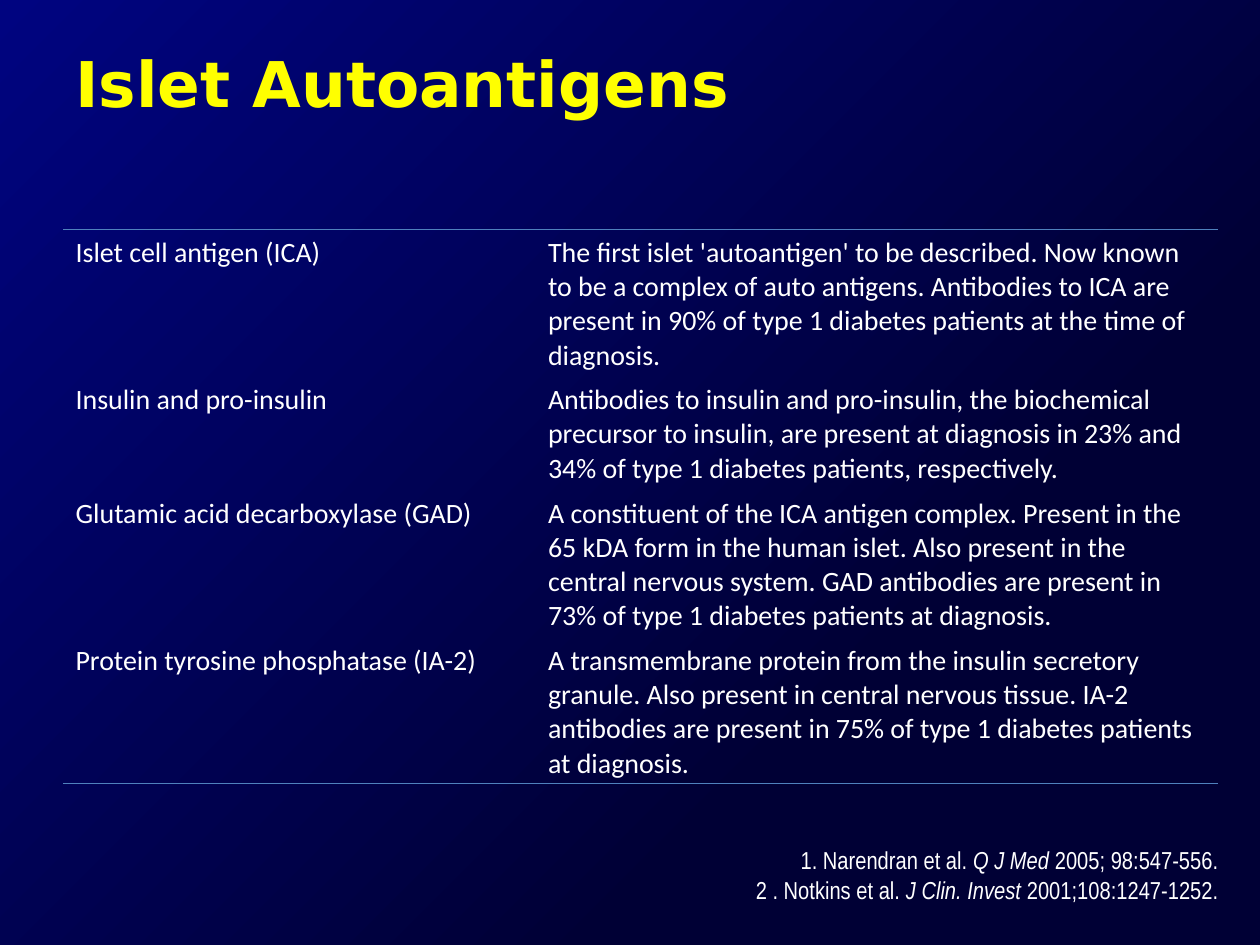
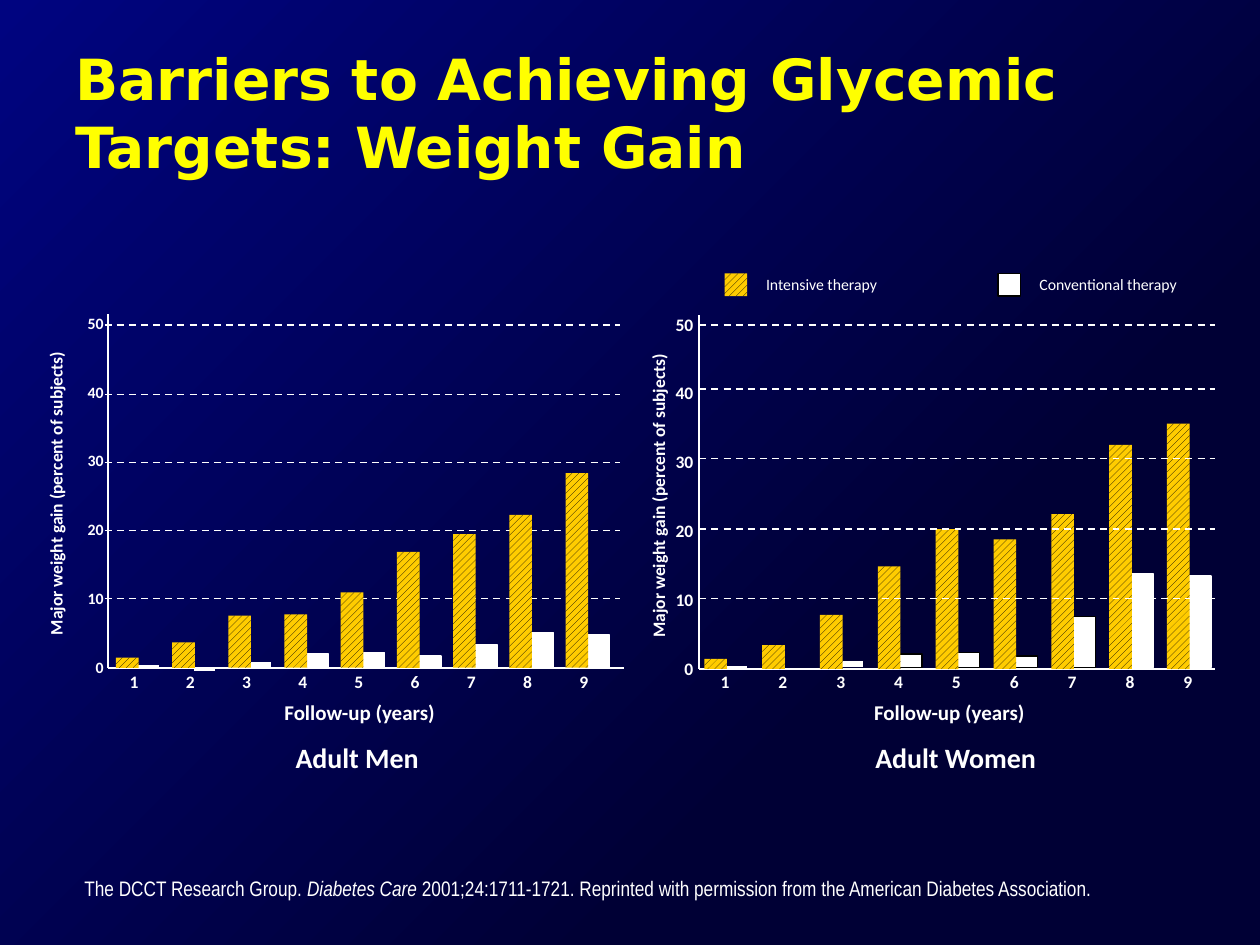
"""Build two diabetes slides: an autoantigen table and paired weight-gain bar charts."""
import pptx
import pptx.dml.color
import pptx.enum.dml
import pptx.enum.shapes
import pptx.enum.text
import pptx.oxml
import pptx.oxml.ns
import pptx.util

Inches = pptx.util.Inches
Pt = pptx.util.Pt
ALIGN = pptx.enum.text.PP_ALIGN

COLORS = {"title": "FFFF00", "text": "FFFFFF", "gold": "FFCC00", "black": "000000",
          "rule": "4F81BD", "night": "000035", "blue": "000480"}
TITLE = {"size": 36, "name": "DejaVu Sans", "bold": True, "color": "title"}
BODY = {"size": 16, "name": "Calibri", "color": "text"}
SOURCE = {"size": 14, "name": "Arial Narrow", "color": "text"}
LABEL = {"size": 10, "name": "Calibri", "bold": True, "color": "text"}
PADDING = (0.1, 0.05)

ANTIGENS = [
    ("Islet cell antigen (ICA)",
     "The first islet 'autoantigen' to be described. Now known to be a complex of auto antigens. "
     "Antibodies to ICA are present in 90% of type 1 diabetes patients at the time of diagnosis."),
    ("Insulin and pro-insulin",
     "Antibodies to insulin and pro-insulin, the biochemical precursor to insulin, are present at "
     "diagnosis in 23% and 34% of type 1 diabetes patients, respectively."),
    ("Glutamic acid decarboxylase (GAD)",
     "A constituent of the ICA antigen complex. Present in the 65 kDA form in the human islet. Also "
     "present in the central nervous system. GAD antibodies are present in 73% of type 1 diabetes "
     "patients at diagnosis."),
    ("Protein tyrosine phosphatase (IA-2)",
     "A transmembrane protein from the insulin secretory granule. Also present in central nervous "
     "tissue. IA-2 antibodies are present in 75% of type 1 diabetes patients at diagnosis."),
]
COLUMN_WIDTHS = (3.75, 5.42)
ROW_HEIGHTS = (1.17, 0.9, 1.17, 1.16)
ANTIGEN_SOURCES = [
    [("1. Narendran et al. ", False), ("Q J Med ", True), ("2005; 98:547-556.", False)],
    [("2 . Notkins et al. ", False), ("J Clin. Invest ", True), ("2001;108:1247-1252.", False)],
]
WEIGHT_SOURCE = [[
    ("The DCCT Research Group. ", False), ("Diabetes Care ", True),
    ("2001;24:1711-1721. Reprinted with permission from the American Diabetes Association.", False),
]]

INCHES_PER_PERCENT = 0.0544
BAR_WIDTH = 0.18
MEN = {
    "name": "Adult Men", "name_left": 1.75, "years_left": 1.77, "axis": 0.86, "base": 5.3,
    "grid_left": 0.83, "grid": (4.75, 4.21, 3.67, 3.13, 2.58), "grid_in_front": False,
    "bar_left": 0.92, "step": 0.446, "year_left": 0.95, "tick_left": 0.54, "tick_size": 9,
    "side_label": (-0.97, 3.78),
    "intensive": (1.5, 3.7, 7.6, 7.8, 11, 16.9, 19.5, 22.3, 28.4),
    "conventional": {4: 2, 5: 2.2, 6: 1.7, 7: 3.3, 8: 5.1, 9: 4.8},
    "strokes": {1: (5.29, 1.5), 2: (5.31, 2), 3: (5.28, 3.5)}, "outlined": (),
}
WOMEN = {
    "name": "Adult Women", "name_left": 6.5, "years_left": 6.45, "axis": 5.55, "base": 5.31,
    "grid_left": 5.55, "grid": (4.75, 4.2, 3.64, 3.09, 2.58), "grid_in_front": True,
    "bar_left": 5.59, "step": 0.459, "year_left": 5.64, "tick_left": 5.22, "tick_size": 10,
    "side_label": (3.81, 3.8),
    "intensive": (1.5, 3.5, 7.9, 15, 20.4, 18.9, 22.6, 32.7, 35.8),
    "conventional": {4: 2, 5: 2.2, 6: 1.7, 7: 7.5, 8: 13.7, 9: 13.4},
    "strokes": {1: (5.3, 1.5), 3: (5.27, 3.5)}, "outlined": (4, 5, 6, 7),
}
LEGEND = [("Intensive therapy", 5.75, True), ("Conventional therapy", 7.92, False)]


def rgb(name):
    return pptx.dml.color.RGBColor.from_string(COLORS[name])


def style(span, look):
    for key, value in look.items():
        if key == "color":
            span.font.color.rgb = rgb(value)
        else:
            setattr(span.font, key, Pt(value) if key == "size" else value)


def write(page, place, paras, look, align=ALIGN.LEFT, padding=PADDING, rotation=0):
    box = page.shapes.add_textbox(*map(Inches, place))
    box.rotation = rotation
    frame = box.text_frame
    frame.word_wrap = True
    frame.margin_left = frame.margin_right = Inches(padding[0])
    frame.margin_top = frame.margin_bottom = Inches(padding[1])
    if isinstance(paras, str):
        paras = [[(paras, False)]]
    for index, parts in enumerate(paras):
        para = frame.paragraphs[0] if index == 0 else frame.add_paragraph()
        para.alignment = align
        for text, italic in parts:
            span = para.add_run()
            span.text = text
            style(span, {**look, "italic": italic})


def draw_line(page, start, end, width=1, dashed=False):
    line = page.shapes.add_connector(pptx.enum.shapes.MSO_CONNECTOR.STRAIGHT,
                                     *map(Inches, start + end))
    line.line.color.rgb = rgb("text")
    line.line.width = Pt(width)
    if dashed:
        line.line.dash_style = pptx.enum.dml.MSO_LINE.DASH
    line._element.spPr.append(pptx.oxml.parse_xml(f"<a:effectLst {pptx.oxml.ns.nsdecls('a')}/>"))


def draw_bar(page, place, hatched, outline="text"):
    bar = page.shapes.add_shape(pptx.enum.shapes.MSO_SHAPE.RECTANGLE, *map(Inches, place))
    bar.shadow.inherit = False
    if hatched:
        bar.fill.patterned()
        bar.fill.pattern = pptx.enum.dml.MSO_PATTERN.WIDE_UPWARD_DIAGONAL
        bar.fill.fore_color.rgb = rgb("black")
        bar.fill.back_color.rgb = rgb("gold")
        bar.line.fill.background()
    else:
        bar.fill.solid()
        bar.fill.fore_color.rgb = rgb("text")
        bar.line.color.rgb = rgb(outline)
        bar.line.width = Pt(0.75)


def paint_master(deck):
    fill = deck.slide_master.background.fill
    fill.gradient()
    gradient = deck.slide_master._element.find(".//" + pptx.oxml.ns.qn("a:gradFill"))
    gradient.getparent().replace(gradient, pptx.oxml.parse_xml(
        f'<a:gradFill {pptx.oxml.ns.nsdecls("a")} rotWithShape="1"><a:gsLst>'
        f'<a:gs pos="30000"><a:srgbClr val="{COLORS["night"]}"/></a:gs>'
        f'<a:gs pos="100000"><a:srgbClr val="{COLORS["blue"]}"/></a:gs></a:gsLst>'
        '<a:path path="circle"><a:fillToRect l="100000" t="100000"/></a:path></a:gradFill>'))


def add_page(deck, title, size=36):
    page = deck.slides.add_slide(deck.slide_layouts[6])
    write(page, (0.5, 0.3, 8.11, 1.25), title, {**TITLE, "size": size})
    return page


def rule_cell(cell, side):
    cell._tc.get_or_add_tcPr().insert(0, pptx.oxml.parse_xml(
        f'<a:{side} {pptx.oxml.ns.nsdecls("a")} w="12700"><a:solidFill>'
        f'<a:srgbClr val="{COLORS["rule"]}"/></a:solidFill></a:{side}>'))


def add_antigen_table(page):
    frame = page.shapes.add_table(len(ANTIGENS), 2, Inches(0.5), Inches(1.82),
                                  Inches(sum(COLUMN_WIDTHS)), Inches(sum(ROW_HEIGHTS)))
    table = frame.table
    table.first_row = table.horz_banding = False
    table._tbl.tblPr.find(pptx.oxml.ns.qn("a:tableStyleId")).text = \
        "{2D5ABB26-0587-4C30-8999-92F81FD0307C}"
    for column, width in zip(table.columns, COLUMN_WIDTHS):
        column.width = Inches(width)
    for index, texts in enumerate(ANTIGENS):
        table.rows[index].height = Inches(ROW_HEIGHTS[index])
        for cell, text in zip(table.rows[index].cells, texts):
            cell.fill.background()
            cell.margin_bottom = Inches(0.03)
            span = cell.text_frame.paragraphs[0].add_run()
            span.text = text
            style(span, BODY)
            if index == 0:
                rule_cell(cell, "lnT")
            if index == len(ANTIGENS) - 1:
                rule_cell(cell, "lnB")


def draw_grid(page, group):
    for top in group["grid"]:
        left = group["grid_left"]
        draw_line(page, (left, top), (left + 4.09, top), dashed=True)


def draw_bars(page, group):
    base = group["base"]
    lefts = [group["bar_left"] + group["step"] * index for index in range(9)]
    for year, value in group["conventional"].items():
        height = value * INCHES_PER_PERCENT
        outline = "black" if year in group["outlined"] else "text"
        draw_bar(page, (lefts[year - 1] + 0.17, 5.3 - height, BAR_WIDTH, height), False, outline)
    for year, (top, width) in group["strokes"].items():
        left = lefts[year - 1] + 0.17
        draw_line(page, (left, top), (left + 0.17, top), width)
    for left, value in zip(lefts, group["intensive"]):
        height = value * INCHES_PER_PERCENT
        draw_bar(page, (left, base - height, BAR_WIDTH, height), True)


def draw_group(page, group):
    axis, base = group["axis"], group["base"]
    draw_line(page, (axis, base), (axis, base - 2.81))
    draw_line(page, (axis, base), (axis + 4.09, base))
    layers = [draw_grid, draw_bars]
    for layer in reversed(layers) if group["grid_in_front"] else layers:
        layer(page, group)
    for index in range(9):
        left = group["year_left"] + group["step"] * index
        write(page, (left, 5.28, 0.23, 0.27), str(index + 1), LABEL, ALIGN.CENTER, (0, 0.05))
    for index in range(6):
        write(page, (group["tick_left"], 5.17 - 0.546 * index, 0.38, 0.25), str(index * 10),
              {**LABEL, "size": group["tick_size"]}, ALIGN.RIGHT)
    write(page, group["side_label"] + (2.83, 0.27), "Major weight gain (percent of subjects)",
          LABEL, ALIGN.CENTER, rotation=270)
    write(page, (group["years_left"], 5.5, 2.17, 0.3), "Follow-up (years)",
          {**LABEL, "size": 12}, ALIGN.CENTER)
    write(page, (group["name_left"], 5.83, 2.17, 0.37), group["name"],
          {**LABEL, "size": 16}, ALIGN.CENTER)


def main():
    deck = pptx.Presentation()
    deck.slide_width, deck.slide_height = Inches(10), Inches(7.5)
    paint_master(deck)

    page = add_page(deck, "Islet Autoantigens")
    add_antigen_table(page)
    write(page, (1.5, 6.71, 8.17, 0.47), ANTIGEN_SOURCES, SOURCE, ALIGN.RIGHT, (0, 0))

    page = add_page(deck, "Barriers to Achieving Glycemic Targets: Weight Gain", 32.4)
    for group in (MEN, WOMEN):
        draw_group(page, group)
    for text, left, hatched in LEGEND:
        draw_bar(page, (left, 2.17, BAR_WIDTH, 0.18), hatched, "black")
        write(page, (left + 0.33, 2.18, 1.33, 0.15), text, {**BODY, "size": 9}, padding=(0, 0))
    write(page, (0.67, 6.95, 9.17, 0.2), WEIGHT_SOURCE, {**SOURCE, "size": 12}, padding=(0, 0))
    deck.save("out.pptx")


if __name__ == "__main__":
    main()
